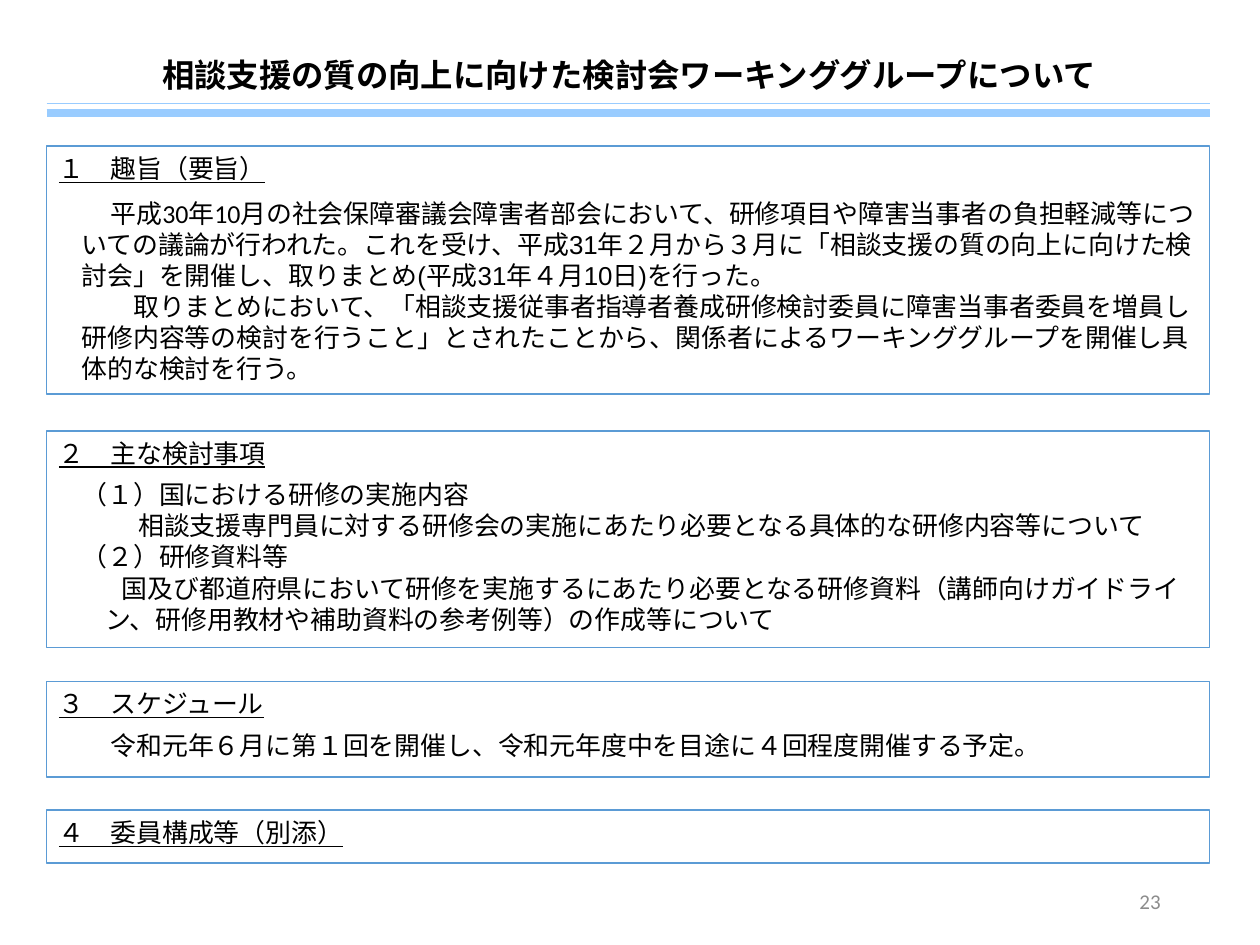
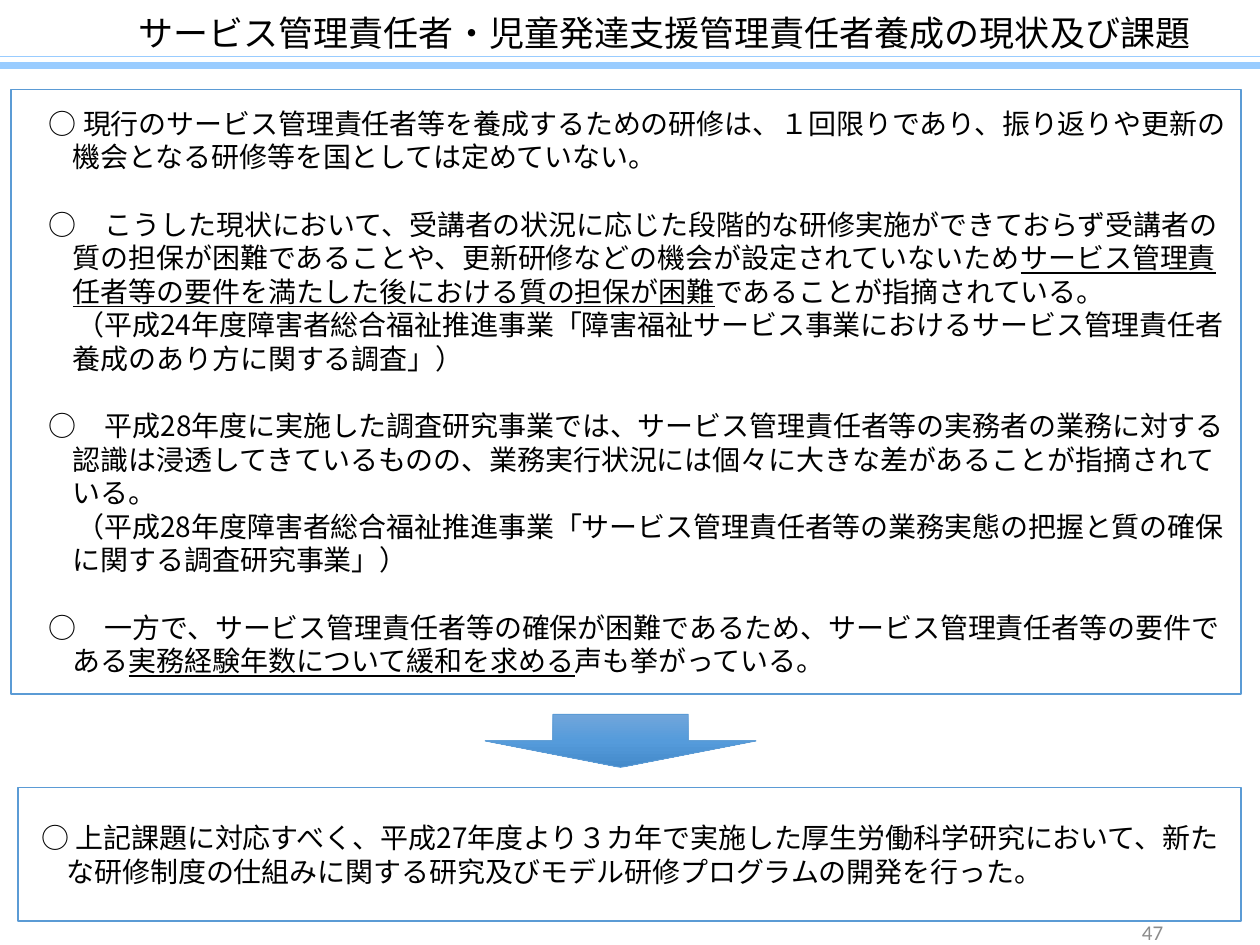
import pptx
import pptx.dml.color
import pptx.enum.shapes
import pptx.enum.text
import pptx.oxml
import pptx.oxml.ns
import pptx.util
from lxml import etree

Inches = pptx.util.Inches
Pt = pptx.util.Pt
qn = pptx.oxml.ns.qn
ALIGN = pptx.enum.text.PP_ALIGN
ANCHOR = pptx.enum.text.MSO_ANCHOR
SHAPE = pptx.enum.shapes.MSO_SHAPE

JAPANESE = "Noto Sans CJK JP"
BLACK, WHITE, GREY = "000000", "FFFFFF", "8C8C8C"
BORDER, BAND = "5B9BD5", "99CCFF"
ARROW_STOPS = [(0, "71A6DB"), (50, "559BDB"), (100, "448ACA")]
LINE_PITCH = 1.2
OUTLINE_SIZE, ISSUE_SIZE = 14.8, 16

OUTLINE_TITLE = "相談支援の質の向上に向けた検討会ワーキンググループについて"
OUTLINE_LEFT, OUTLINE_WIDTH = 0.37, 9.23
OUTLINE = [
    dict(top=1.16, height=1.97, heading="１　趣旨（要旨）", gap=8, body=[
        (0.18, 0.23, [
            ("平成30年10月の社会保障審議会障害者部会において、研修項目や障害当事者の負担軽減等に"
             "ついての議論が行われた。これを受け、", "Calibri"),
            ("平成31年２月から３月に「相談支援の質の向上に向けた検討会」を開催し、取りまとめ"
             "(平成31年４月10日)を行った。", "Arial")]),
        (0.18, 0.41, [
            ("取りまとめにおいて、「相談支援従事者指導者養成研修検討委員に障害当事者委員を増員し"
             "研修内容等の検討を行うこと」とされたことから、関係者によるワーキンググループを開催し"
             "具体的な検討を行う。", "Arial")]),
    ]),
    dict(top=3.42, height=1.72, heading="２　主な検討事項", gap=6, body=[
        (0.18, 0, [("（１）国における研修の実施内容", "Calibri")]),
        (0.18, 0.45, [("相談支援専門員に対する研修会の実施にあたり必要となる具体的な研修内容等について",
                       "Calibri")]),
        (0.18, 0, [("（２）研修資料等", "Calibri")]),
        (0.37, 0.13, [("国及び都道府県において研修を実施するにあたり必要となる研修資料（講師向け"
                       "ガイドライン、研修用教材や補助資料の参考例等）の作成等について", "Calibri")]),
    ]),
    dict(top=5.41, height=0.76, heading="３　スケジュール", gap=6, body=[
        (0.41, 0, [("令和元年６月に第１回を開催し、令和元年度中を目途に４回程度開催する予定。",
                    "Arial")]),
    ]),
    dict(top=6.43, height=0.42, heading="４　委員構成等（別添）", gap=0, body=[]),
]

ISSUE_TITLE = "サービス管理責任者・児童発達支援管理責任者養成の現状及び課題"
PLAIN, UNDERLINED = False, True
ITEM, SOURCE = -0.19, 0.03
ISSUES = [
    (ITEM, [("○ 現行のサービス管理責任者等を養成するための研修は、１回限りであり、振り返りや"
             "更新の機会となる研修等を国としては定めていない。", PLAIN)]),
    (ITEM, [("○　こうした現状において、受講者の状況に応じた段階的な研修実施ができておらず受講者の"
             "質の担保が困難であることや、更新研修などの機会が設定されていないため", PLAIN),
            ("サービス管理責任者等の要件を満たした後における質の担保が困難", UNDERLINED),
            ("であることが指摘されている。", PLAIN)]),
    (SOURCE, [("（平成24年度障害者総合福祉推進事業「障害福祉サービス事業におけるサービス管理責任者"
               "養成のあり方に関する調査」）", PLAIN)]),
    (ITEM, [("○　平成28年度に実施した調査研究事業では、サービス管理責任者等の実務者の業務に対する"
             "認識は浸透してきているものの、業務実行状況には個々に大きな差があることが"
             "指摘されている。", PLAIN)]),
    (SOURCE, [("（平成28年度障害者総合福祉推進事業「サービス管理責任者等の業務実態の把握と質の確保に"
               "関する調査研究事業」）", PLAIN)]),
    (ITEM, [("○　一方で、サービス管理責任者等の確保が困難であるため、サービス管理責任者等の要件である",
             PLAIN),
            ("実務経験年数について緩和を求める", UNDERLINED),
            ("声も挙がっている。", PLAIN)]),
]
RESPONSE = ("○ 上記課題に対応すべく、平成27年度より３カ年で実施した厚生労働科学研究において、"
            "新たな研修制度の仕組みに関する研究及びモデル研修プログラムの開発を行った。")


def color(code):
    return pptx.dml.color.RGBColor.from_string(code)


def add_frame(page, left, top, width, height, border=BORDER, kind=SHAPE.RECTANGLE,
              anchor=ANCHOR.TOP, weight=1):
    box = page.shapes.add_shape(kind, Inches(left), Inches(top), Inches(width), Inches(height))
    box.shadow.inherit = False
    box.fill.solid()
    box.fill.fore_color.rgb = color(WHITE)
    box.line.color.rgb = color(border)
    box.line.width = Pt(weight)
    box.text_frame.word_wrap = True
    box.text_frame.vertical_anchor = anchor
    return box


def add_text_box(page, left, top, width, height):
    box = page.shapes.add_textbox(Inches(left), Inches(top), Inches(width), Inches(height))
    box.text_frame.word_wrap = True
    box.text_frame.vertical_anchor = ANCHOR.MIDDLE
    return box


def add_paragraph(frame, spans, size, margin=0, indent=0, before=0, align=ALIGN.LEFT,
                  font=JAPANESE, shade=BLACK, bold=False, underline=False):
    first = frame.paragraphs[0]
    para = frame.add_paragraph() if first.runs else first
    para.alignment = align
    para.line_spacing = Pt(size * LINE_PITCH)
    para.space_before = Pt(before)
    properties = para._p.get_or_add_pPr()
    properties.set("marL", str(Inches(margin)))
    properties.set("indent", str(Inches(indent)))
    para.font.size = Pt(size)
    para.font.name = font
    para.font.bold = bold
    para.font.underline = underline
    para.font.color.rgb = color(shade)
    defaults = properties.find(qn("a:defRPr"))
    etree.SubElement(defaults, qn("a:ea")).set("typeface", JAPANESE)
    for text in spans:
        para.add_run().text = text
    return para


def add_title(box, text, size, margin=0, bold=False):
    frame = box.text_frame
    frame.margin_top = frame.margin_bottom = 0
    add_paragraph(frame, [text], size, margin, align=ALIGN.CENTER, bold=bold)


def add_band(page, left, right, thin_y, thick_y):
    for y, weight in ((thin_y, 0.5), (thick_y, 4.5)):
        line = page.shapes.add_connector(pptx.enum.shapes.MSO_CONNECTOR.STRAIGHT,
                                         Inches(left), Inches(y), Inches(right), Inches(y))
        line.line.color.rgb = color(BAND)
        line.line.width = Pt(weight)
        etree.SubElement(line._element.spPr, qn("a:effectLst"))


def add_page_number(page, number, left, top):
    box = add_text_box(page, left, top, 2.25, 0.4)
    add_paragraph(box.text_frame, [number], 12, align=ALIGN.RIGHT, font="Calibri", shade=GREY)


def add_arrow(page):
    arrow = add_frame(page, 3.85, 5.67, 2.15, 0.42, kind=SHAPE.DOWN_ARROW, weight=0.5)
    arrow.fill.gradient()
    arrow.fill.gradient_angle = 270
    stops = arrow._element.spPr.find(qn("a:gradFill")).find(qn("a:gsLst"))
    for stop in list(stops):
        stops.remove(stop)
    for percent, code in ARROW_STOPS:
        stop = etree.SubElement(stops, qn("a:gs"))
        stop.set("pos", str(percent * 1000))
        etree.SubElement(stop, qn("a:srgbClr")).set("val", code)


def build_outline(page):
    title = add_frame(page, 0.39, 0.41, 9.2, 0.37, border=WHITE, anchor=ANCHOR.MIDDLE)
    add_title(title, OUTLINE_TITLE, 18.5, bold=True)
    add_band(page, OUTLINE_LEFT, OUTLINE_LEFT + OUTLINE_WIDTH, 0.82, 0.9)
    for section in OUTLINE:
        box = add_frame(page, OUTLINE_LEFT, section["top"], OUTLINE_WIDTH, section["height"])
        add_paragraph(box.text_frame, [section["heading"]], OUTLINE_SIZE, 0.18, -0.18,
                      underline=True)
        for index, (margin, indent, spans) in enumerate(section["body"]):
            para = add_paragraph(box.text_frame, [text for text, font in spans], OUTLINE_SIZE,
                                 margin, indent, before=0 if index else section["gap"])
            for span, (text, font) in zip(para.runs, spans):
                span.font.name = font
    add_page_number(page, "23", 7.06, 6.95)


def build_issues(page):
    add_title(add_text_box(page, 0.01, 0, 9.97, 0.52), ISSUE_TITLE, 20, margin=0.56)
    box = add_frame(page, 0.09, 0.71, 9.76, 4.8, anchor=ANCHOR.MIDDLE)
    for index, (indent, spans) in enumerate(ISSUES):
        gap = ISSUE_SIZE * LINE_PITCH if index and indent == ITEM else 0
        para = add_paragraph(box.text_frame, [text for text, marked in spans], ISSUE_SIZE,
                             0.39, indent, before=gap)
        for span, (text, marked) in zip(para.runs, spans):
            if marked:
                span.font.underline = True
    response = add_frame(page, 0.14, 6.25, 9.71, 1.06, anchor=ANCHOR.MIDDLE)
    add_paragraph(response.text_frame, [RESPONSE], ISSUE_SIZE, 0.29, -0.2)
    add_arrow(page)
    add_band(page, 0, 10, 0.45, 0.52)
    add_page_number(page, "47", 7.08, 7.2)


def main():
    deck = pptx.Presentation()
    deck.slide_width = Inches(10)
    deck.slide_height = Inches(7.5)
    for build in (build_outline, build_issues):
        build(deck.slides.add_slide(deck.slide_layouts[6]))
    deck.save("out.pptx")


if __name__ == "__main__":
    main()
